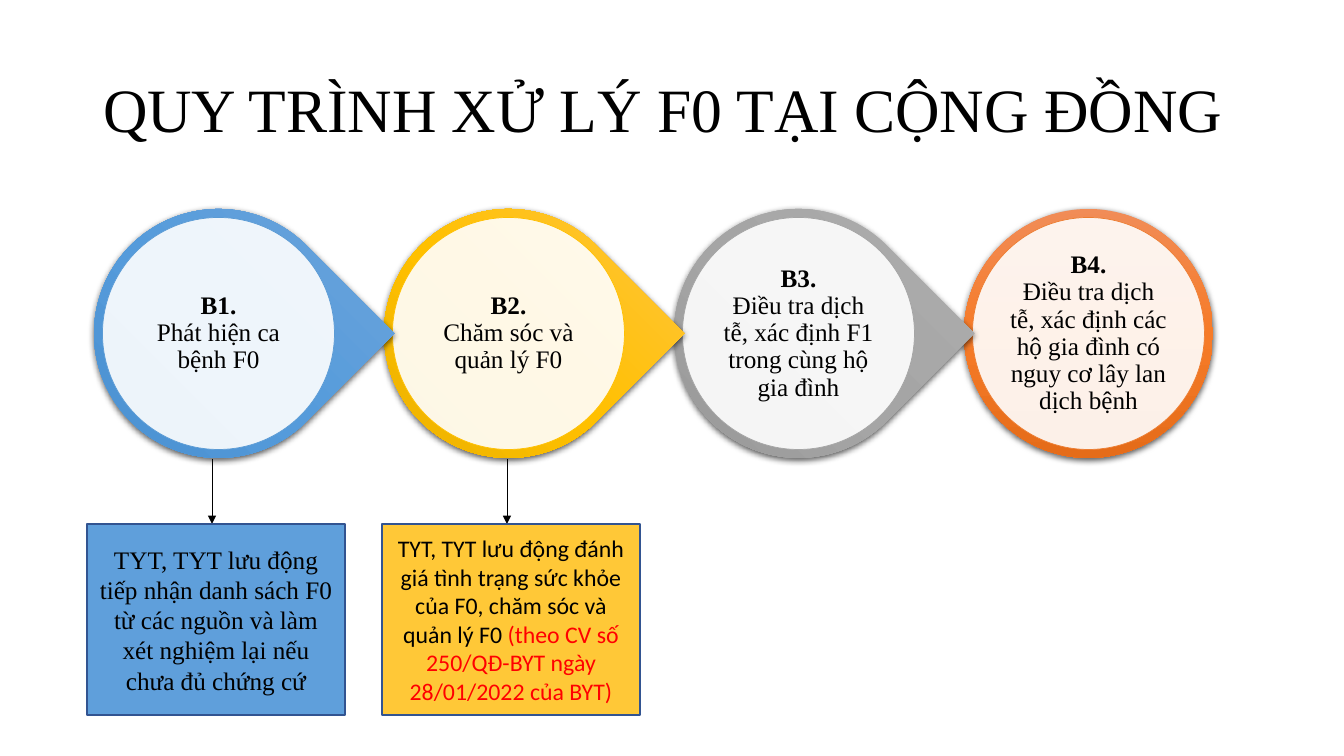
"""Build the slide on the community F0 handling process."""
import copy

import pptx
import pptx.dml.color
import pptx.enum.shapes
import pptx.enum.text
import pptx.oxml
import pptx.oxml.ns
import pptx.util

SERIF, SANS = "Times New Roman", "Calibri"
BLACK, RED, WHITE, EDGE = "000000", "FF0000", "FFFFFF", "325491"
TITLE = "QUY TRÌNH XỬ LÝ F0 TẠI CỘNG ĐỒNG"
STEPS = [
    ("B1.", "Phát hiện ca bệnh F0", "5B9BD5", ("71A6DB", "559BDB", "448ACA")),
    ("B2.", "Chăm sóc và quản lý F0", "FFC000", ("FFC64B", "FFC000", "E3AB00")),
    ("B3.", "Điều tra dịch tễ, xác định F1 trong cùng hộ gia đình", "A5A5A5",
     ("AFAFAF", "A5A5A5", "939393")),
    ("B4.", "Điều tra dịch tễ, xác định các hộ gia đình có nguy cơ lây lan dịch bệnh",
     "ED7D31", ("F18C57", "F67B28", "E56C19")),
]
NOTES = [
    ("5F9FDB", SERIF, 18, [
        ("TYT, TYT lưu động tiếp nhận danh sách F0 từ các nguồn và làm xét nghiệm lại "
         "nếu chưa đủ chứng cứ", BLACK)]),
    ("FFC837", SANS, 17, [
        ("TYT, TYT lưu động đánh giá tình trạng sức khỏe của F0, chăm sóc và quản lý F0 ",
         BLACK),
        ("(theo CV số 250/QĐ-BYT ngày 28/01/2022 của BYT)", RED)]),
]
STEP_X, STEP_Y, STEP_GAP, STEP_SIZE = 94, 209, 290, 249
DISC_SIZE, LABEL_SIZE = 232, 166
NOTE_X, NOTE_Y, NOTE_GAP, NOTE_W, NOTE_H = 87, 524, 295, 258, 191
ARROW_X, ARROW_Y = 125, 459

Shape = pptx.enum.shapes.MSO_SHAPE
Align = pptx.enum.text.PP_ALIGN
Anchor = pptx.enum.text.MSO_ANCHOR
qn = pptx.oxml.ns.qn


def px(n):
    return round(n * 914400 / 100.8)


def rgb(color):
    return pptx.dml.color.RGBColor.from_string(color)


def xml(source):
    return pptx.oxml.parse_xml(source.replace(">", f" {pptx.oxml.ns.nsdecls('a')}>", 1))


def add_run(p, text, font, size, color=BLACK, bold=False):
    r = p.add_run()
    r.text = text
    r.font.name, r.font.size, r.font.bold = font, pptx.util.Pt(size), bold
    r.font.color.rgb = rgb(color)


def setup_text(sp, align, spacing=None):
    tf = sp.text_frame
    tf.word_wrap, tf.vertical_anchor = True, Anchor.MIDDLE
    p = tf.paragraphs[0]
    p.alignment, p.line_spacing = align, spacing
    return p


def add_shape(s, kind, x, y, w, h, fill=None, line=None, width=0.5):
    sp = s.shapes.add_shape(kind, px(x), px(y), px(w), px(h))
    sp.shadow.inherit = False
    if fill:
        sp.fill.solid()
        sp.fill.fore_color.rgb = rgb(fill)
    if line:
        sp.line.color.rgb = rgb(line)
        sp.line.width = pptx.util.Pt(width)
    else:
        sp.line.fill.background()
    return sp


def shade(sp, colors):
    sp.fill.gradient()
    sp.fill.gradient_angle = 270
    stops = sp._element.spPr.find(qn("a:gradFill")).find(qn("a:gsLst"))
    stops.insert(1, copy.deepcopy(stops[0]))
    for stop, position, color in zip(sp.fill.gradient_stops, (0, 0.5, 1), colors):
        stop.position = position
        stop.color.rgb = rgb(color)
    sp._element.spPr.find(qn("a:effectLst")).append(xml(
        '<a:outerShdw blurRad="57150" dist="19050" dir="5400000" algn="ctr" rotWithShape="0">'
        '<a:srgbClr val="000000"><a:alpha val="63000"/></a:srgbClr></a:outerShdw>'))


def add_step(s, i, name, text, edge, colors):
    x = STEP_X + i * STEP_GAP
    last = i == len(STEPS) - 1
    drop = add_shape(s, Shape.OVAL if last else Shape.TEAR, x, STEP_Y, STEP_SIZE, STEP_SIZE)
    drop.rotation = 0 if last else 45
    shade(drop, colors)

    inset = (STEP_SIZE - DISC_SIZE) / 2
    disc = add_shape(s, Shape.OVAL, x + inset, STEP_Y + inset, DISC_SIZE, DISC_SIZE,
                     WHITE, edge)
    disc._element.spPr.find(qn("a:solidFill"))[0].append(xml('<a:alpha val="90000"></a:alpha>'))

    inset = (STEP_SIZE - LABEL_SIZE) / 2
    label = s.shapes.add_textbox(px(x + inset), px(STEP_Y + inset),
                                 px(LABEL_SIZE), px(LABEL_SIZE))
    tf = label.text_frame
    tf.margin_left = tf.margin_right = tf.margin_top = tf.margin_bottom = px(3)
    p = setup_text(label, Align.CENTER, 0.9)
    add_run(p, name, SERIF, 18, bold=True)
    p.add_line_break()
    add_run(p, text, SERIF, 18)


def add_note(s, i, fill, font, size, runs):
    x = NOTE_X + i * NOTE_GAP
    arrow = s.shapes.add_connector(pptx.enum.shapes.MSO_CONNECTOR.STRAIGHT, px(x + ARROW_X),
                                   px(ARROW_Y), px(x + ARROW_X), px(NOTE_Y))
    arrow.line.color.rgb = rgb(BLACK)
    arrow.line.width = pptx.util.Pt(0.5)
    arrow.line._get_or_add_ln().append(xml('<a:tailEnd type="triangle"></a:tailEnd>'))
    arrow._element.spPr.append(xml("<a:effectLst></a:effectLst>"))

    box = add_shape(s, Shape.RECTANGLE, x, NOTE_Y, NOTE_W, NOTE_H, fill, EDGE, 1)
    p = setup_text(box, Align.CENTER)
    for text, color in runs:
        add_run(p, text, font, size, color)


def main():
    prs = pptx.Presentation()
    prs.slide_width, prs.slide_height = px(1344), px(756)
    s = prs.slides.add_slide(prs.slide_layouts[5])
    title = s.shapes.title
    title.left, title.top, title.width, title.height = px(93), px(40), px(1159), px(146)
    add_run(setup_text(title, Align.LEFT, 0.9), TITLE, SERIF, 44)
    for i, step in reversed(list(enumerate(STEPS))):
        add_step(s, i, *step)
    for i, note in enumerate(NOTES):
        add_note(s, i, *note)
    prs.save("out.pptx")


if __name__ == "__main__":
    main()
